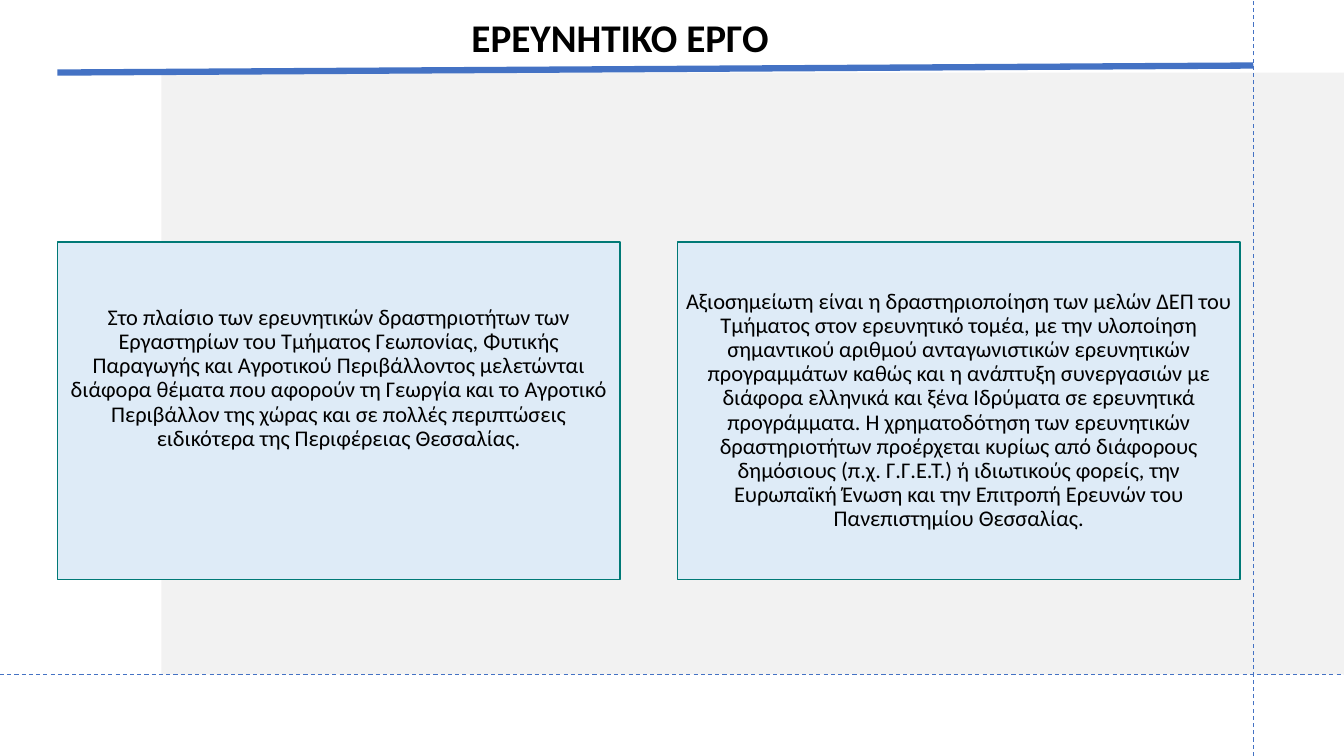
from lxml import etree
from pptx import Presentation
from pptx.dml.color import RGBColor
from pptx.enum.dml import MSO_LINE
from pptx.enum.shapes import MSO_CONNECTOR, MSO_SHAPE
from pptx.enum.text import MSO_ANCHOR as Anchor, PP_ALIGN as Align
from pptx.oxml.ns import qn
from pptx.util import Inches, Pt

# Content: each card has its text and the free space kept below it
TITLE = "ΕΡΕΥΝΗΤΙΚΟ ΕΡΓΟ"
CARDS = [
    ("Στο πλαίσιο των ερευνητικών δραστηριοτήτων των Εργαστηρίων του Τμήματος "
     "Γεωπονίας, Φυτικής Παραγωγής και Αγροτικού Περιβάλλοντος μελετώνται διάφορα "
     "θέματα που αφορούν τη Γεωργία και το Αγροτικό Περιβάλλον της χώρας και σε "
     "πολλές περιπτώσεις ειδικότερα της Περιφέρειας Θεσσαλίας.", 0.64),
    ("Αξιοσημείωτη είναι η δραστηριοποίηση των μελών ΔΕΠ του Τμήματος στον "
     "ερευνητικό τομέα, με την υλοποίηση σημαντικού αριθμού ανταγωνιστικών "
     "ερευνητικών προγραμμάτων καθώς και η ανάπτυξη συνεργασιών με διάφορα ελληνικά "
     "και ξένα Ιδρύματα σε ερευνητικά προγράμματα. Η χρηματοδότηση των ερευνητικών "
     "δραστηριοτήτων προέρχεται κυρίως από διάφορους δημόσιους (π.χ. Γ.Γ.Ε.Τ.) ή "
     "ιδιωτικούς φορείς, την Ευρωπαϊκή Ένωση και την Επιτροπή Ερευνών του "
     "Πανεπιστημίου Θεσσαλίας.", 0),
]
COLORS = {"panel": "E7E6E6", "card": "DEEBF7", "border": "007976",
          "rule": "4472C4", "text": "000000"}

# Layout in inches
W, H = 13.33, 7.5
LEFT, TOP, GUIDE_X, GUIDE_Y = 0.57, 0.72, 12.43, 6.69
PANEL_X = 0.12 * W
CARD_W, CARD_H, CARD_Y, GAP, PAD = 5.58, 3.35, 2.4, 0.57, 0.07


def rgb(name):
    return RGBColor.from_string(COLORS[name])


def add_box(x, y, w, h, fill):
    sp = slide.shapes.add_shape(MSO_SHAPE.RECTANGLE, *map(Inches, (x, y, w, h)))
    sp.shadow.inherit = False
    sp.fill.solid()
    sp.fill.fore_color.rgb = rgb(fill)
    sp.line.fill.background()
    return sp


def write(tf, text, size, anchor, bold=False):
    tf.word_wrap = True
    tf.vertical_anchor = anchor
    p = tf.paragraphs[0]
    p.alignment = Align.CENTER
    p.line_spacing = 0.9
    r = p.add_run()
    r.text = text
    r.font.name, r.font.size, r.font.bold = "Calibri", Pt(size), bold
    r.font.color.rgb = rgb("text")


def add_rule(x1, y1, x2, y2, width, dashed=False):
    line = slide.shapes.add_connector(MSO_CONNECTOR.STRAIGHT,
                                      *map(Inches, (x1, y1, x2, y2)))
    line.line.color.rgb = rgb("rule")
    line.line.width = Pt(width)
    if dashed:
        line.line.dash_style = MSO_LINE.DASH
    etree.SubElement(line._element.spPr, qn("a:effectLst"))


prs = Presentation()
prs.slide_width, prs.slide_height = Inches(W), Inches(H)
slide = prs.slides.add_slide(prs.slide_layouts[6])

# Half-transparent background panel
panel = add_box(PANEL_X, TOP, W - PANEL_X, GUIDE_Y - TOP, "panel")
color = panel._element.spPr.find(qn("a:solidFill"))[0]
etree.SubElement(color, qn("a:alpha"), val="50000")

# Title
title = slide.shapes.add_textbox(*map(Inches, (0.39, 0.2, 11.52, 0.45)))
write(title.text_frame, TITLE, 28, Anchor.BOTTOM, bold=True)

# Cards
for i, (text, space_below) in enumerate(CARDS):
    card = add_box(LEFT + i * (CARD_W + GAP), CARD_Y, CARD_W, CARD_H, "card")
    card.line.color.rgb = rgb("border")
    card.line.width = Pt(1)
    tf = card.text_frame
    tf.margin_left = tf.margin_right = tf.margin_top = Inches(PAD)
    tf.margin_bottom = Inches(PAD + space_below)
    write(tf, text, 16, Anchor.MIDDLE)

# Dashed guides and the rule under the title
add_rule(0, GUIDE_Y, W, GUIDE_Y, 0.75, dashed=True)
add_rule(GUIDE_X, H, GUIDE_X, 0, 0.75, dashed=True)
add_rule(LEFT, TOP, GUIDE_X, 0.65, 4.5)

prs.save("out.pptx")
